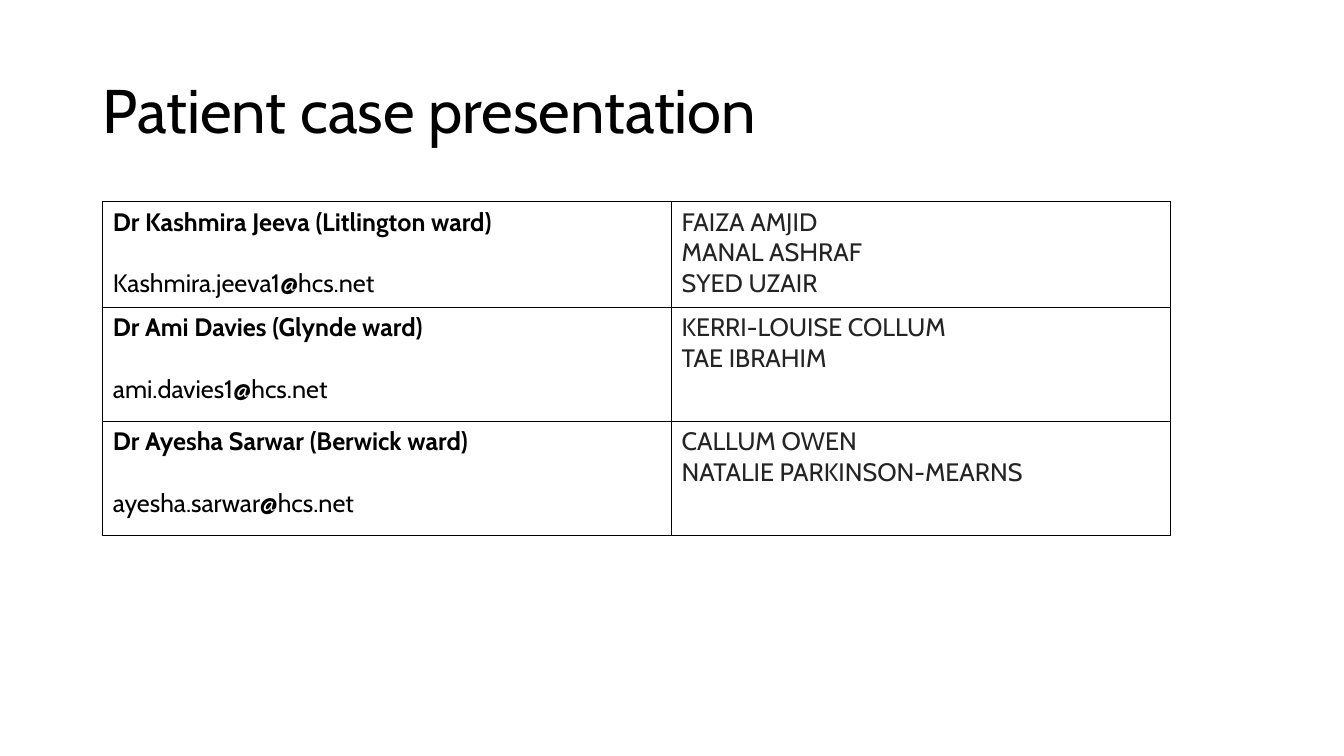
from dataclasses import dataclass

from lxml import etree
from pptx import Presentation
from pptx.dml.color import RGBColor
from pptx.enum.text import MSO_ANCHOR, PP_ALIGN
from pptx.oxml.ns import qn
from pptx.slide import Slide
from pptx.table import _Cell
from pptx.util import Emu, Pt

LEFT = PP_ALIGN.LEFT
MIDDLE = MSO_ANCHOR.MIDDLE

BLACK = RGBColor(0x00, 0x00, 0x00)
CHARCOAL = RGBColor(0x24, 0x24, 0x24)
WHITE = RGBColor(0xFF, 0xFF, 0xFF)

FONT = "Cabin"
TITLE_SIZE = 44
CELL_SIZE = 18
EMAIL_GAP = 22
BORDER_WIDTH = 1
TITLE_ONLY = 5
COLUMN_WIDTHS = (564, 495)


@dataclass(frozen=True)
class WardTeam:
    doctor: str
    email: str
    students: tuple[str, ...]
    height: int


TEAMS = (
    WardTeam("Dr Kashmira Jeeva (Litlington ward)", "Kashmira.jeeva1@hcs.net",
             ("FAIZA AMJID", "MANAL ASHRAF", "SYED UZAIR"), 105),
    WardTeam("Dr Ami Davies (Glynde ward)", "ami.davies1@hcs.net",
             ("KERRI-LOUISE COLLUM", "TAE IBRAHIM"), 113),
    WardTeam("Dr Ayesha Sarwar (Berwick ward)", "ayesha.sarwar@hcs.net",
             ("CALLUM OWEN", "NATALIE PARKINSON-MEARNS"), 113),
)


def px(n: int) -> Emu:
    """Convert px, at 100 to the inch, into EMU."""
    return Emu(n * 9144)


def add_title(s: Slide, text: str) -> None:
    sp = s.shapes.title
    sp.left, sp.top, sp.width, sp.height = px(92), px(40), px(1150), px(145)
    tf = sp.text_frame
    tf.text = text
    tf.word_wrap = True
    tf.vertical_anchor = MIDDLE
    p = tf.paragraphs[0]
    p.alignment = LEFT
    p.line_spacing = 0.9
    font = p.runs[0].font
    font.name, font.size = FONT, Pt(TITLE_SIZE)
    font.color.rgb = BLACK


def set_borders(cell: _Cell) -> None:
    tc_pr = cell._tc.get_or_add_tcPr()
    for i, side in enumerate(("a:lnL", "a:lnR", "a:lnT", "a:lnB")):
        ln = etree.Element(qn(side), w=str(Pt(BORDER_WIDTH)))
        fill = etree.SubElement(ln, qn("a:solidFill"))
        etree.SubElement(fill, qn("a:srgbClr"), val=str(BLACK))
        tc_pr.insert(i, ln)


def fill_cell(cell: _Cell, lines: tuple[str, ...], color: RGBColor) -> None:
    cell.fill.solid()
    cell.fill.fore_color.rgb = WHITE
    set_borders(cell)
    tf = cell.text_frame
    tf.text = "\n".join(lines)
    for p in tf.paragraphs:
        font = p.runs[0].font
        font.name, font.size, font.bold = FONT, Pt(CELL_SIZE), False
        font.color.rgb = color


def add_team_table(s: Slide, teams: tuple[WardTeam, ...]) -> None:
    height = sum(team.height for team in teams)
    table = s.shapes.add_table(
        len(teams), len(COLUMN_WIDTHS),
        px(102), px(200), px(sum(COLUMN_WIDTHS)), px(height)).table
    table.first_row = False
    table.horz_banding = False
    for column, width in zip(table.columns, COLUMN_WIDTHS):
        column.width = px(width)
    for row, team in zip(table.rows, teams):
        row.height = px(team.height)
        contact, students = row.cells
        fill_cell(contact, (team.doctor, team.email), BLACK)
        doctor, email = contact.text_frame.paragraphs
        doctor.runs[0].font.bold = True
        email.space_before = Pt(EMAIL_GAP)
        fill_cell(students, team.students, CHARCOAL)


def main() -> None:
    prs = Presentation()
    prs.slide_width, prs.slide_height = px(1333), px(750)
    s = prs.slides.add_slide(prs.slide_layouts[TITLE_ONLY])
    add_title(s, "Patient case presentation")
    add_team_table(s, TEAMS)
    prs.save("out.pptx")


if __name__ == "__main__":
    main()
